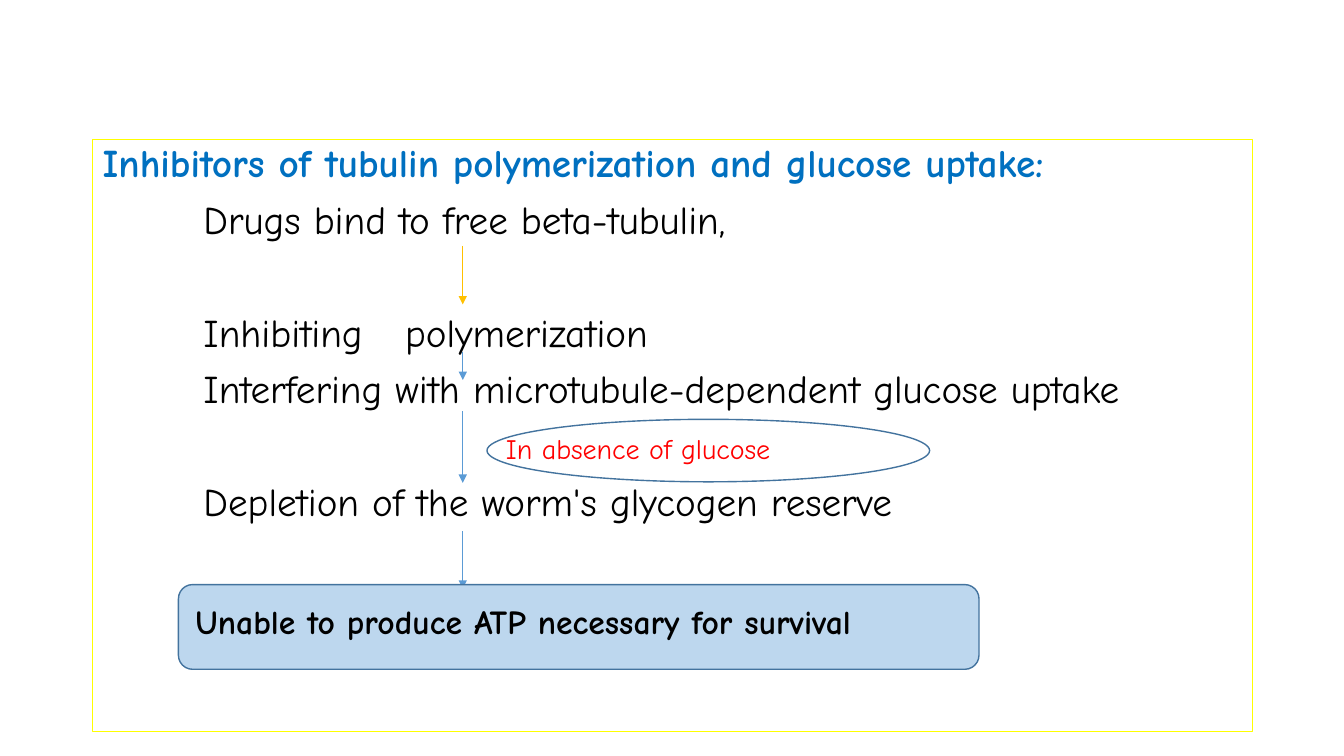
import dataclasses
import typing

import lxml.etree
import pptx
import pptx.dml.color
import pptx.enum.shapes
import pptx.enum.text
import pptx.oxml.ns
import pptx.util

Inches = pptx.util.Inches
Pt = pptx.util.Pt
RGB = pptx.dml.color.RGBColor
MSO_SHAPE = pptx.enum.shapes.MSO_SHAPE
qn = pptx.oxml.ns.qn


@dataclasses.dataclass(frozen=True)
class Theme:
    font: str = "Comic Neue"
    heading: str = "0070C0"
    text: str = "000000"
    alert: str = "FF0000"
    frame: str = "FFFF00"
    first_arrow: str = "FFC000"
    arrow: str = "5B9BD5"
    outline: str = "43739E"
    result_fill: str = "BDD7EE"
    body_size: float = 28
    result_size: float = 24
    note_size: float = 20


THEME = Theme()


@dataclasses.dataclass(frozen=True)
class Line:
    text: str
    before: float = 10
    indent: float = 1
    size: float = THEME.body_size
    color: str = THEME.text
    bold: bool = False
    tab: typing.Optional[float] = None


@dataclasses.dataclass(frozen=True)
class Box:
    shape: MSO_SHAPE
    left: float
    top: float
    width: float
    height: float
    line: str
    line_width: float = 1
    fill: typing.Optional[str] = None


@dataclasses.dataclass(frozen=True)
class Arrow:
    top: float
    bottom: float
    color: str = THEME.arrow


ARROW_X = 4.59
FRAME = Box(MSO_SHAPE.RECTANGLE, 0.92, 1.38, 11.5, 5.88, THEME.frame, 0.75)
NOTE = Box(MSO_SHAPE.OVAL, 4.83, 4.16, 4.39, 0.62, THEME.outline)
RESULT = Box(MSO_SHAPE.ROUNDED_RECTANGLE, 1.77, 5.8, 7.94, 0.84,
             THEME.outline, fill=THEME.result_fill)

MECHANISM = [
    Line("Inhibitors of tubulin polymerization and glucose uptake:",
         before=0, indent=0, color=THEME.heading, bold=True),
    Line("Drugs bind to free beta-tubulin,"),
    Line("Inhibiting\tpolymerization", before=50.4, tab=2.97),
    Line("Interfering with microtubule-dependent glucose uptake"),
    Line("In absence of glucose", before=16.6, indent=4,
         size=THEME.note_size, color=THEME.alert),
    Line("Depletion of the worm's glycogen reserve", before=12.1),
]
OUTCOME = Line("Unable to produce ATP necessary for survival", before=0,
               indent=0, size=THEME.result_size, bold=True)
ARROWS = [
    Arrow(2.44, 3.02, THEME.first_arrow),
    Arrow(3.49, 3.77),
    Arrow(4.08, 4.79),
    Arrow(5.27, 5.84),
]


def add_box(slide, box: Box):
    sp = slide.shapes.add_shape(box.shape, Inches(box.left), Inches(box.top),
                                Inches(box.width), Inches(box.height))
    sp.shadow.inherit = False
    if box.fill:
        sp.fill.solid()
        sp.fill.fore_color.rgb = RGB.from_string(box.fill)
    else:
        sp.fill.background()
    sp.line.color.rgb = RGB.from_string(box.line)
    sp.line.width = Pt(box.line_width)
    return sp


def add_arrow(slide, arrow: Arrow) -> None:
    cxn = slide.shapes.add_connector(
        pptx.enum.shapes.MSO_CONNECTOR.STRAIGHT, Inches(ARROW_X),
        Inches(arrow.top), Inches(ARROW_X), Inches(arrow.bottom))
    cxn.line.color.rgb = RGB.from_string(arrow.color)
    cxn.line.width = Pt(0.5)
    lxml.etree.SubElement(cxn.line._get_or_add_ln(), qn("a:tailEnd"),
                          type="triangle")
    lxml.etree.SubElement(cxn._element.spPr, qn("a:effectLst"))


def write_lines(tf, lines: typing.Sequence[Line], spacing: float) -> None:
    tf.word_wrap = True
    tf.vertical_anchor = pptx.enum.text.MSO_ANCHOR.TOP
    for i, line in enumerate(lines):
        p = tf.add_paragraph() if i else tf.paragraphs[0]
        p.alignment = pptx.enum.text.PP_ALIGN.LEFT
        p.line_spacing = spacing
        p.space_before = Pt(line.before)
        pPr = p._p.get_or_add_pPr()
        pPr.set("marL", "0")
        pPr.set("indent", str(Inches(line.indent)))
        if line.tab is not None:
            tabs = lxml.etree.SubElement(pPr, qn("a:tabLst"))
            lxml.etree.SubElement(tabs, qn("a:tab"),
                                  pos=str(Inches(line.tab)), algn="l")
        r = p.add_run()
        r.text = line.text
        r.font.name = THEME.font
        r.font.size = Pt(line.size)
        r.font.bold = line.bold
        r.font.color.rgb = RGB.from_string(line.color)


def main() -> None:
    prs = pptx.Presentation()
    prs.slide_width, prs.slide_height = Inches(13.33), Inches(7.5)
    slide = prs.slides.add_slide(prs.slide_layouts[6])

    frame = add_box(slide, FRAME)
    write_lines(frame.text_frame, MECHANISM, 0.9)
    for arrow in ARROWS:
        add_arrow(slide, arrow)
    add_box(slide, NOTE)
    add_box(slide, RESULT)
    label = slide.shapes.add_textbox(Inches(1.84), Inches(5.91),
                                     Inches(8.01), Inches(0.5))
    write_lines(label.text_frame, [OUTCOME], 1.0)

    prs.save("out.pptx")


if __name__ == "__main__":
    main()
